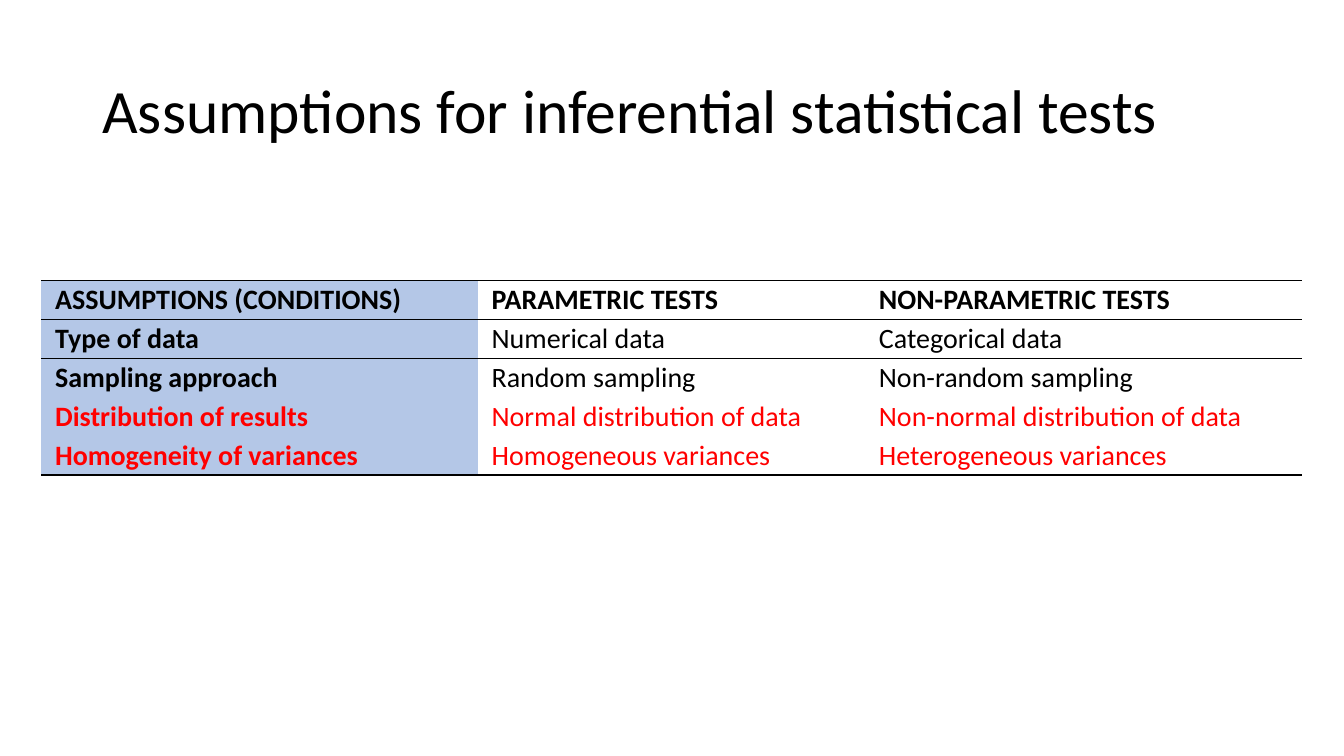
"""Build a slide that compares the assumptions of parametric and non-parametric tests."""
import dataclasses

import pptx
import pptx.dml.color
import pptx.enum.text
import pptx.oxml
import pptx.oxml.ns
import pptx.util

Cm = pptx.util.Cm
FONT = "Calibri"
BLACK, RED, BLUE = "000000", "FF0000", "B4C7E7"
PLAIN_TABLE_STYLE = "{2D5ABB26-0587-4C30-8999-92F81FD0307C}"
COLUMN_WIDTHS = (11, 9.76, 11.02)
ROW_HEIGHT = 0.98


@dataclasses.dataclass(frozen=True)
class Assumption:
    """One table row: its texts and its look."""
    texts: tuple[str, str, str]
    color: str = BLACK
    header: bool = False


ASSUMPTIONS = (
    Assumption(("ASSUMPTIONS (CONDITIONS)", "PARAMETRIC TESTS", "NON-PARAMETRIC TESTS"), header=True),
    Assumption(("Type of data", "Numerical data", "Categorical data")),
    Assumption(("Sampling approach", "Random sampling", "Non-random sampling")),
    Assumption(("Distribution of results", "Normal distribution of data", "Non-normal distribution of data"), RED),
    Assumption(("Homogeneity of variances", "Homogeneous variances", "Heterogeneous variances"), RED),
)


def rgb(value: str) -> pptx.dml.color.RGBColor:
    """Turn a hex string into a colour."""
    return pptx.dml.color.RGBColor.from_string(value)


def write(frame, text: str, *, size: float, spacing: float, color: str = BLACK, bold: bool = False) -> None:
    """Put one formatted paragraph into a text frame."""
    para = frame.paragraphs[0]
    para.line_spacing = spacing
    span = para.add_run()
    span.text = text
    span.font.name = FONT
    span.font.size = pptx.util.Pt(size)
    span.font.bold = bold
    span.font.color.rgb = rgb(color)


def rule_cell(cell, sides: str) -> None:
    """Draw a black rule on the named sides of a cell (T, B or both)."""
    properties = cell._tc.get_or_add_tcPr()
    for side in sides:
        properties.append(pptx.oxml.parse_xml(
            f'<a:ln{side} {pptx.oxml.ns.nsdecls("a")} w="{pptx.util.Pt(1)}">'
            f'<a:solidFill><a:srgbClr val="{BLACK}"/></a:solidFill></a:ln{side}>'))


def add_title(page, text: str) -> None:
    """Add the slide heading."""
    box = page.shapes.add_textbox(Cm(2.33), Cm(1.01), Cm(29.21), Cm(3.68))
    box.text_frame.word_wrap = True
    box.text_frame.vertical_anchor = pptx.enum.text.MSO_ANCHOR.MIDDLE
    write(box.text_frame, text, size=44, spacing=0.9)


def add_assumption_table(page) -> None:
    """Add the table of assumptions."""
    count = len(ASSUMPTIONS)
    shape = page.shapes.add_table(count, len(COLUMN_WIDTHS), Cm(1.04), Cm(7.07),
                                  Cm(sum(COLUMN_WIDTHS)), Cm(ROW_HEIGHT * count))
    table = shape.table
    table.first_row = table.horz_banding = False
    table._tbl.tblPr.find(pptx.oxml.ns.qn("a:tableStyleId")).text = PLAIN_TABLE_STYLE
    for column, width in zip(table.columns, COLUMN_WIDTHS):
        column.width = Cm(width)
    for row_index, assumption in enumerate(ASSUMPTIONS):
        table.rows[row_index].height = Cm(ROW_HEIGHT)
        ruled_sides = ("T" if row_index < 2 else "") + ("B" if row_index in (0, count - 1) else "")
        for column_index, text in enumerate(assumption.texts):
            cell = table.cell(row_index, column_index)
            first_column = column_index == 0
            cell.margin_left = cell.margin_right = Cm(0.35)
            cell.margin_top = cell.margin_bottom = 0
            rule_cell(cell, ruled_sides)
            if first_column:
                cell.fill.solid()
                cell.fill.fore_color.rgb = rgb(BLUE)
            else:
                cell.fill.background()
            write(cell.text_frame, text, size=20, spacing=1.07, color=assumption.color,
                  bold=first_column or assumption.header)


def main() -> None:
    """Build and save the deck."""
    deck = pptx.Presentation()
    deck.slide_width, deck.slide_height = Cm(33.87), Cm(19.05)
    page = deck.slides.add_slide(deck.slide_layouts[6])
    add_title(page, "Assumptions for inferential statistical tests")
    add_assumption_table(page)
    deck.save("out.pptx")


if __name__ == "__main__":
    main()
